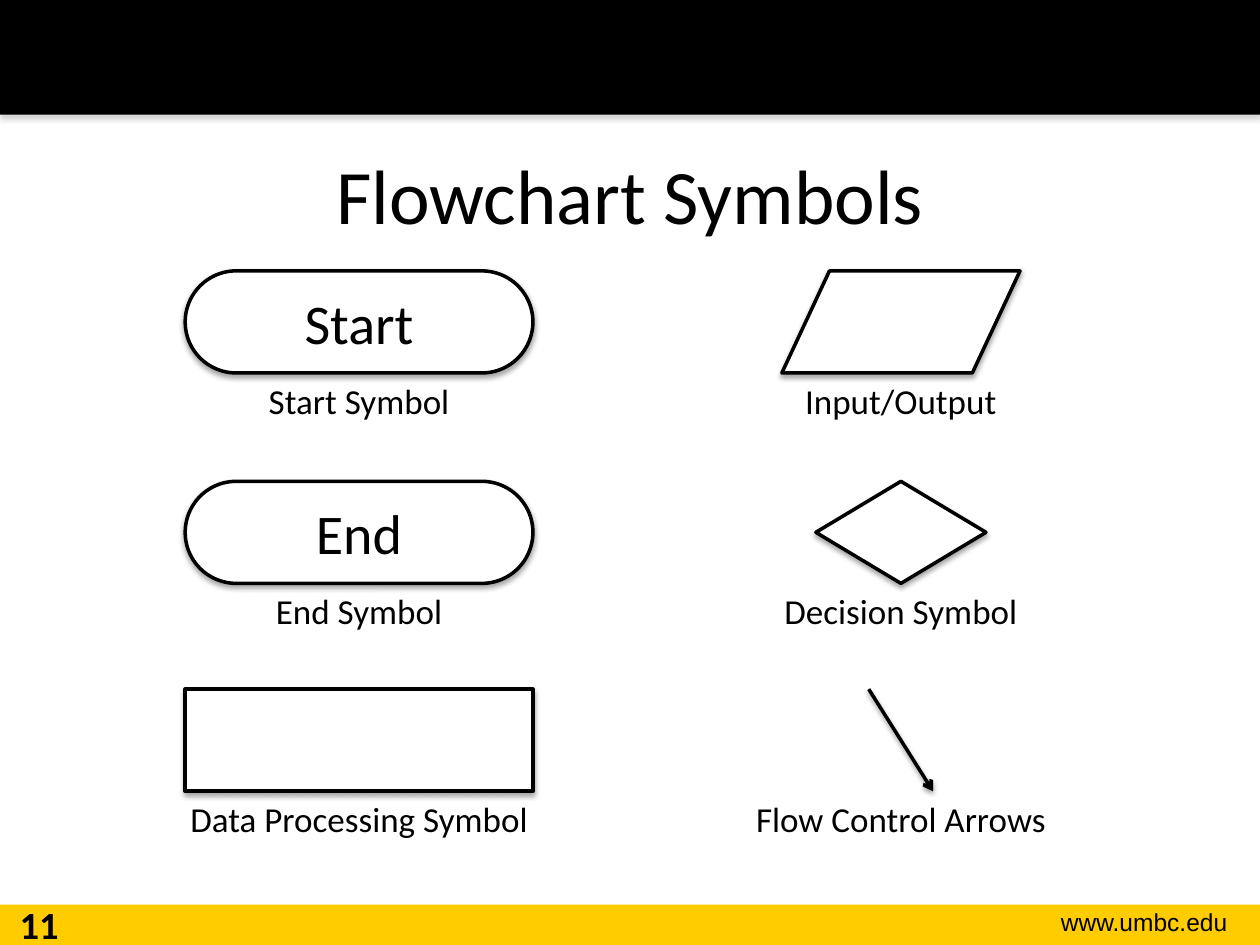
from lxml.etree import SubElement
from pptx import Presentation
from pptx.dml.color import RGBColor
from pptx.enum.shapes import MSO_CONNECTOR, MSO_SHAPE
from pptx.enum.text import MSO_ANCHOR, PP_ALIGN
from pptx.oxml.ns import qn
from pptx.util import Inches, Pt

BLACK = "000000"
WHITE = "FFFFFF"
GOLD = "FFCC00"
GRAY = "808080"
ROW_TOPS = (2.15, 3.82, 5.47)
SYMBOL_HEIGHT = 0.81
LEFT_CENTER = 2.85
RIGHT_CENTER = 7.15
CAPTION_WIDTH = 3.14


def color(value):
    return RGBColor.from_string(value)


def add_shadow(shape, value, opacity=35, distance=1.8):
    properties = shape._element.spPr
    effects = properties.find(qn("a:effectLst"))
    if effects is None:
        effects = SubElement(properties, qn("a:effectLst"))
    shadow = SubElement(effects, qn("a:outerShdw"), blurRad=str(Pt(3.1)),
                        dist=str(Pt(distance)), dir="5400000", rotWithShape="0")
    shade = SubElement(shadow, qn("a:srgbClr"), val=value)
    SubElement(shade, qn("a:alpha"), val=str(opacity * 1000))


def write(shape, text, size, font="Calibri", bold=False,
          align=PP_ALIGN.CENTER, anchor=MSO_ANCHOR.TOP):
    frame = shape.text_frame
    frame.word_wrap = True
    frame.vertical_anchor = anchor
    paragraph = frame.paragraphs[0]
    paragraph.alignment = align
    run = paragraph.add_run()
    run.text = text
    run.font.name = font
    run.font.size = Pt(size)
    run.font.bold = bold
    run.font.color.rgb = color(BLACK)


def add_text(slide, left, top, width, height, text, size, **options):
    box = slide.shapes.add_textbox(Inches(left), Inches(top), Inches(width), Inches(height))
    write(box, text, size, **options)


def add_filled(slide, kind, left, top, width, height, fill):
    shape = slide.shapes.add_shape(kind, Inches(left), Inches(top), Inches(width), Inches(height))
    shape.shadow.inherit = False
    shape.fill.solid()
    shape.fill.fore_color.rgb = color(fill)
    shape.line.fill.background()
    return shape


def add_symbol(slide, kind, center, top, width, label=""):
    shape = add_filled(slide, kind, center - width / 2, top, width, SYMBOL_HEIGHT, WHITE)
    shape.line.color.rgb = color(BLACK)
    shape.line.width = Pt(2)
    add_shadow(shape, BLACK)
    if kind == MSO_SHAPE.ROUNDED_RECTANGLE:
        shape.adjustments[0] = 0.5
    if label:
        write(shape, label, 32, anchor=MSO_ANCHOR.MIDDLE)


def add_flow_arrow(slide, center, top, width):
    arrow = slide.shapes.add_connector(
        MSO_CONNECTOR.STRAIGHT, Inches(center - width / 2), Inches(top),
        Inches(center + width / 2), Inches(top + SYMBOL_HEIGHT))
    arrow.line.color.rgb = color(BLACK)
    arrow.line.width = Pt(2)
    SubElement(arrow.line._get_or_add_ln(), qn("a:tailEnd"), type="arrow")
    add_shadow(arrow, BLACK, opacity=38, distance=1.6)


def add_caption(slide, center, top, text):
    add_text(slide, center - CAPTION_WIDTH / 2, top + SYMBOL_HEIGHT, CAPTION_WIDTH, 0.44, text, 20)


def add_frame(slide):
    add_filled(slide, MSO_SHAPE.RECTANGLE, 0, 7.18, 10, 0.32, GOLD)
    header = add_filled(slide, MSO_SHAPE.RECTANGLE, 0, 0, 10, 0.91, BLACK)
    add_shadow(header, GRAY)
    add_text(slide, 7.85, 7.15, 1.99, 0.34, "www.umbc.edu", 14, font="Arial", align=PP_ALIGN.RIGHT)
    add_text(slide, 0, 7.1, 0.62, 0.4, "11", 22, bold=True)


def main():
    presentation = Presentation()
    presentation.slide_width = Inches(10)
    presentation.slide_height = Inches(7.5)
    slide = presentation.slides.add_slide(presentation.slide_layouts[6])
    add_frame(slide)
    add_text(slide, 0.5, 0.91, 9, 1.25, "Flowchart Symbols", 44, anchor=MSO_ANCHOR.MIDDLE)

    left_symbols = (
        (MSO_SHAPE.ROUNDED_RECTANGLE, "Start", "Start Symbol"),
        (MSO_SHAPE.ROUNDED_RECTANGLE, "End", "End Symbol"),
        (MSO_SHAPE.RECTANGLE, "", "Data Processing Symbol"),
    )
    for top, (kind, label, caption) in zip(ROW_TOPS, left_symbols):
        add_symbol(slide, kind, LEFT_CENTER, top, 2.76, label)
        add_caption(slide, LEFT_CENTER, top, caption)

    add_symbol(slide, MSO_SHAPE.FLOWCHART_DATA, RIGHT_CENTER, ROW_TOPS[0], 1.89)
    add_symbol(slide, MSO_SHAPE.DIAMOND, RIGHT_CENTER, ROW_TOPS[1], 1.35)
    add_flow_arrow(slide, RIGHT_CENTER, ROW_TOPS[2], 0.51)
    for top, caption in zip(ROW_TOPS, ("Input/Output", "Decision Symbol", "Flow Control Arrows")):
        add_caption(slide, RIGHT_CENTER, top, caption)

    presentation.save("out.pptx")


if __name__ == "__main__":
    main()
